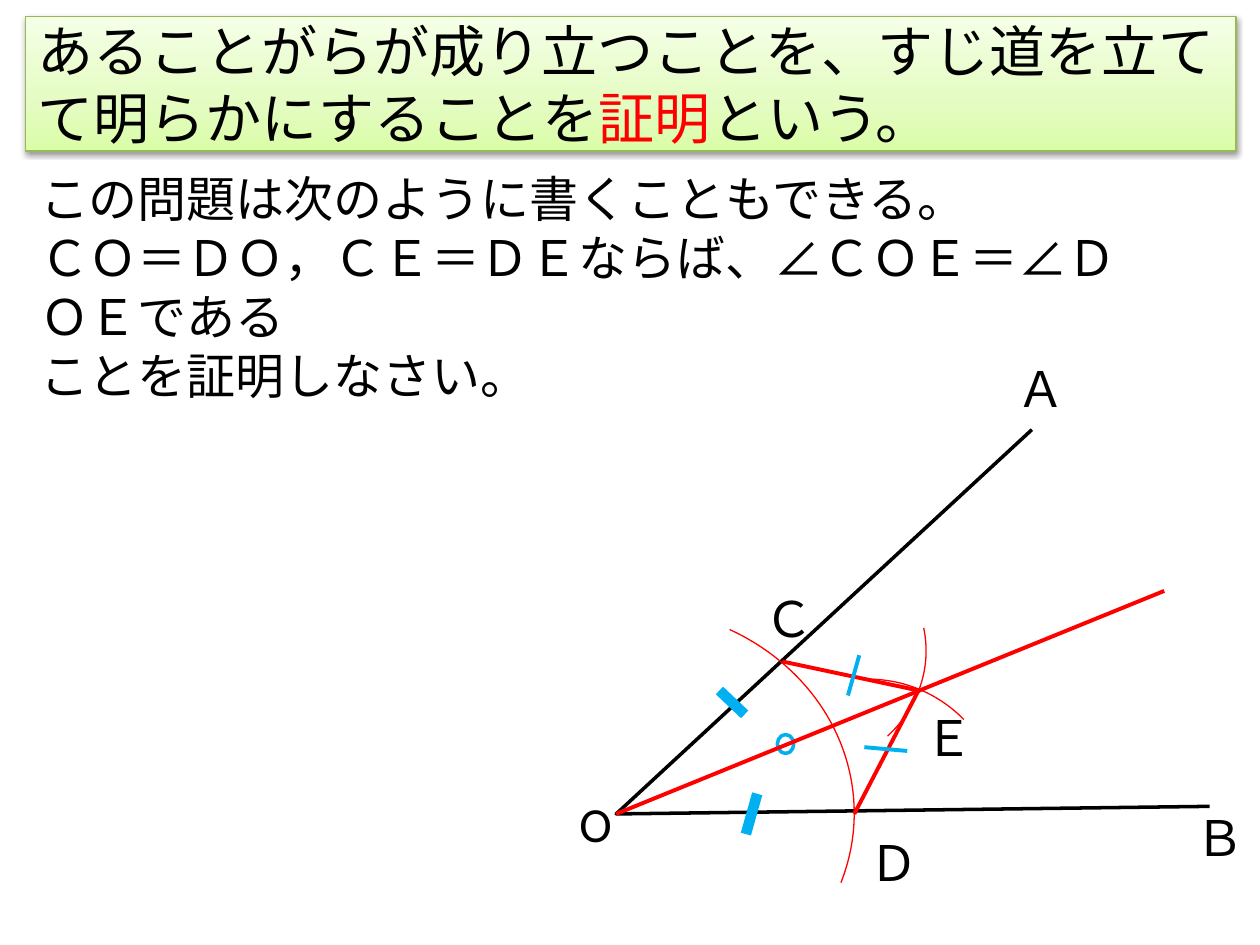
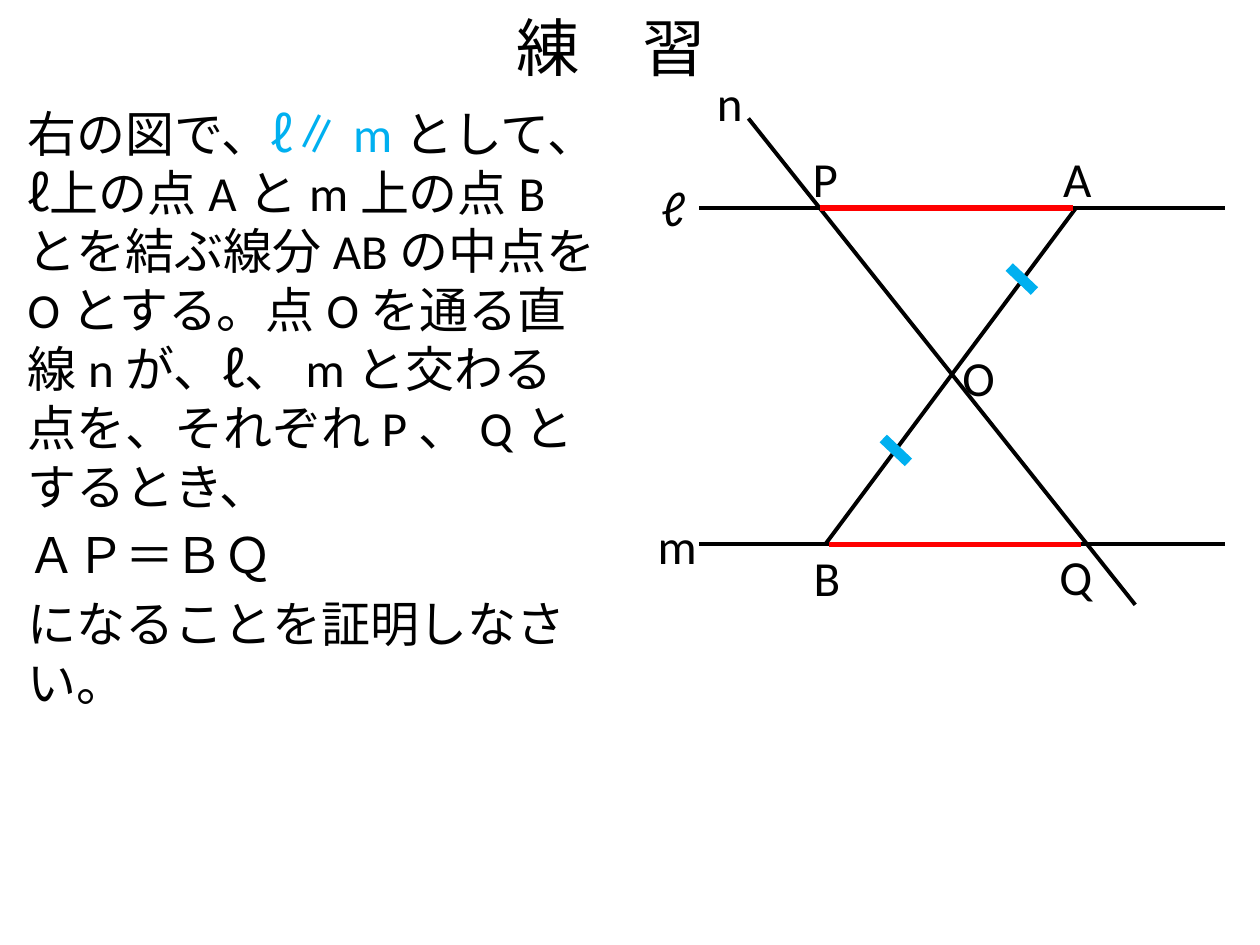
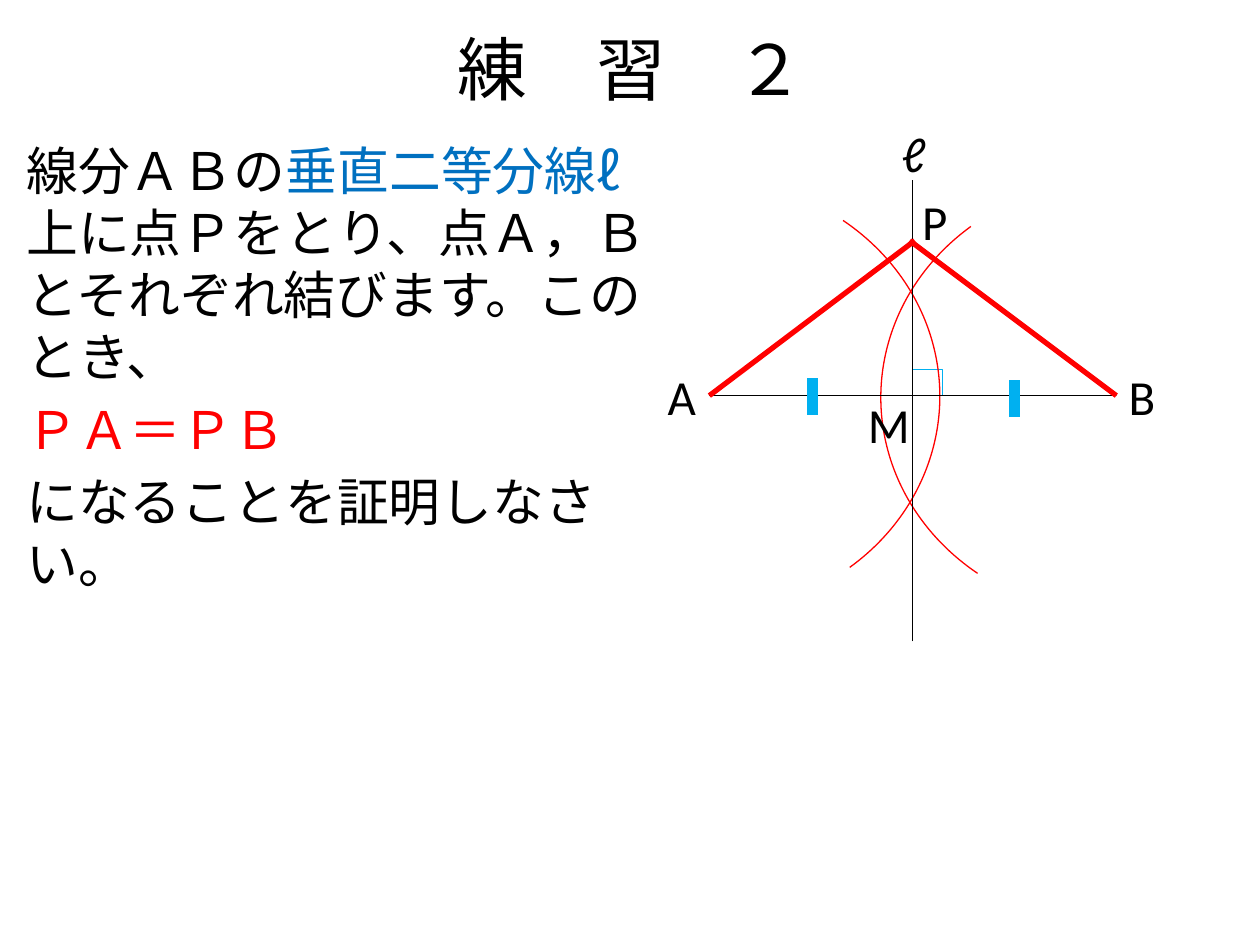
"""Build three geometry slides about proofs, each with text and a figure."""
from copy import deepcopy

from pptx import Presentation
from pptx.dml.color import RGBColor
from pptx.enum import lang, shapes, text
from pptx.oxml import parse_xml
from pptx.oxml.ns import nsdecls, qn
from pptx.util import Inches, Pt

BLACK = RGBColor(0, 0, 0)
RED = RGBColor(0xFF, 0, 0)
SKY = RGBColor(0, 0xB0, 0xF0)
BLUE = RGBColor(0, 0x70, 0xC0)
BANNER_LINE = RGBColor(0x98, 0xB9, 0x55)
BANNER_STOPS = [(0, RGBColor(0xDA, 0xFD, 0xA7)), (0.35, RGBColor(0xE4, 0xFC, 0xC2)),
                (1, RGBColor(0xF5, 0xFF, 0xE7))]
FONT = "Calibri"
LABEL_SIZE = 28
LABEL_HEIGHT = 0.57
LABEL_WIDTHS = {"ℓ": 0.4, "m": 0.52, "n": 0.41, "O": 0.46, "B": 0.42, "Q": 0.47,
                "A": 0.43, "P": 0.41, "M": 0.54}
CENTER = text.PP_ALIGN.CENTER
OVAL = shapes.MSO_SHAPE.FLOWCHART_CONNECTOR
RECTANGLE = shapes.MSO_SHAPE.RECTANGLE

SLIDES = [
    {
        "title": {"at": (0.2, 0.13, 9.61, 1.07), "size": 32, "banner": True, "paras": [
            [("あることがらが成り立つことを、すじ道を立てて明らかにすることを", BLACK),
             ("証明", RED), ("という。", BLACK)]]},
        "body": {"at": (0.22, 1.29, 8.94, 1.51), "size": 28, "gap": 0, "paras": [
            [("この問題は次のように書くこともできる。", BLACK)],
            [("ＣＯ＝ＤＯ，ＣＥ＝ＤＥならば、∠ＣＯＥ＝∠ＤＯＥである", BLACK)],
            [("ことを証明しなさい。", BLACK)]]},
        "grouped": True,
        "angle": [(8.19, 3.41), (4.89, 6.46), (9.6, 6.4)],
        "outlines": [(OVAL, (6.17, 5.83, 0.13, 0.15), 2)],
        "arcs": [((3.17, 4.82, 3.61, 3.27), 299.24, 17.95, 0),
                 ((5.17, 4.19, 2.18, 1.95), 350.33, 40.82, 0),
                 ((5.83, 5.39, 2.12, 2.12), 3.92, 52.26, 263.5)],
        "lines": [(RED, 2.25, [(4.89, 6.46, 9.24, 4.69), (6.21, 5.25, 7.29, 5.48),
                               (6.78, 6.46, 7.29, 5.48)]),
                  (SKY, 6, [(5.71, 5.48, 5.91, 5.67), (6.01, 6.3, 5.92, 6.62)]),
                  (SKY, 2.25, [(6.82, 5.2, 6.73, 5.52), (7.2, 5.96, 6.86, 5.93)])],
        "label_box": (0.38, 0.4),
        "labels": [("Ｄ", 6.8, 6.56), ("Ｃ", 5.97, 4.62), ("Ｂ", 9.39, 6.36),
                   ("O", 4.5, 6.25), ("Ａ", 7.97, 2.8), ("Ｅ", 7.24, 5.57)],
    },
    {
        "title": {"at": (0.35, 0.1, 9, 0.54), "size": 36, "paras": [[("練　習", BLACK)]]},
        "body": {"at": (0.12, 0.77, 4.72, 4.1), "size": 28, "gap": 0.2, "paras": [
            [("右の図で、", BLACK), ("ℓ∥m", SKY),
             ("として、ℓ上の点Aとm上の点Bとを結ぶ線分ABの中点をOとする。"
              "点Oを通る直線nが、ℓ、mと交わる点を、それぞれP、Qとするとき、", BLACK)],
            [("ＡＰ＝ＢＱ", BLACK)],
            [("になることを証明しなさい。", BLACK)]]},
        "lines": [(BLACK, 2.25, [(5.55, 1.65, 9.72, 1.65), (5.55, 4.32, 9.72, 4.32),
                                 (5.94, 0.94, 9.01, 4.8), (6.55, 4.32, 8.54, 1.65)]),
                  (SKY, 6, [(8.01, 2.12, 8.21, 2.31), (7.01, 3.48, 7.21, 3.67)]),
                  (RED, 3, [(8.52, 1.65, 6.51, 1.65), (8.58, 4.32, 6.58, 4.32)])],
        "labels": [("ℓ", 5.15, 1.36), ("m", 5.12, 4.04), ("n", 5.59, 0.53),
                   ("O", 7.54, 2.71), ("B", 6.36, 4.3), ("Q", 8.31, 4.29),
                   ("A", 8.34, 1.13), ("P", 6.35, 1.13)],
    },
    {
        "title": {"at": (0.51, 0.15, 9, 0.77), "size": 39.6,
                  "paras": [[("練　習　２", BLACK)]]},
        "body": {"at": (0.11, 1.05, 5.12, 2.95), "size": 29.6, "gap": 0.2, "paras": [
            [("線分ＡＢの", BLACK), ("垂直二等分線ℓ", BLUE),
             ("上に点Ｐをとり、点Ａ，Ｂとそれぞれ結びます。このとき、", BLACK)],
            [("ＰＡ＝ＰＢ", RED)],
            [("になることを証明しなさい。", BLACK)]]},
        "outlines": [(RECTANGLE, (7.24, 2.93, 0.24, 0.21), 0.75)],
        "arcs": [((3.73, 1.42, 3.73, 3.45), 308.17, 49.74, 0),
                 ((6.99, 1.43, 3.73, 3.45), 308.17, 49.74, 180)],
        "lines": [(BLACK, 0.75, [(5.63, 3.14, 8.86, 3.14), (7.24, 5.09, 7.24, 1.43),
                                 (5.63, 3.14, 7.24, 1.91), (8.86, 3.14, 7.24, 1.91)]),
                  (SKY, 6, [(6.45, 3, 6.45, 3.29), (8.05, 3.02, 8.05, 3.31)]),
                  (RED, 3, [(5.63, 3.14, 7.26, 1.91), (8.86, 3.14, 7.22, 1.91)])],
        "labels": [("M", 6.79, 3.08), ("ℓ", 7.06, 0.93), ("B", 8.86, 2.86),
                   ("A", 5.2, 2.86), ("P", 7.22, 1.47)],
    },
]


def inches(values):
    return [Inches(value) for value in values]


def write(box, paras, size, align=text.PP_ALIGN.LEFT, anchor=text.MSO_ANCHOR.TOP, gap=0):
    frame = box.text_frame
    frame.word_wrap = True
    frame.vertical_anchor = anchor
    for index, spans in enumerate(paras):
        para = frame.add_paragraph() if index else frame.paragraphs[0]
        para.alignment = align
        if index and gap:
            para.space_before = Pt(size * gap)
        for words, color in spans:
            span = para.add_run()
            span.text = words
            span.font.color.rgb = color
            style = {"name": FONT, "size": Pt(size),
                     "language_id": lang.MSO_LANGUAGE_ID.JAPANESE}
            for key, value in style.items():
                setattr(span.font, key, value)


def stroke(shape, color, width):
    shape.line.color.rgb = color
    shape.line.width = Pt(width)


def add_outline(figure, kind, at, color, width):
    shape = figure.add_shape(kind, *inches(at))
    shape.shadow.inherit = False
    shape.fill.background()
    stroke(shape, color, width)
    return shape


def add_banner(page, at):
    banner = page.shapes.add_shape(RECTANGLE, *inches(at))
    stroke(banner, BANNER_LINE, 0.75)
    banner.fill.gradient()
    banner.fill.gradient_angle = 90
    stop_list = banner.fill._xPr.find(qn("a:gradFill")).find(qn("a:gsLst"))
    stop_list.insert(1, deepcopy(stop_list[0]))
    for stop, (position, color) in zip(banner.fill.gradient_stops, BANNER_STOPS):
        stop.position = position
        stop.color.rgb = color
    banner._element.spPr.append(parse_xml(
        f'<a:effectLst {nsdecls("a")}><a:outerShdw blurRad="{Pt(3.1)}" dist="{Pt(1.6)}" '
        'dir="5400000" rotWithShape="0"><a:srgbClr val="000000"><a:alpha val="38000"/>'
        '</a:srgbClr></a:outerShdw></a:effectLst>'))
    return banner


def add_title(page, title):
    banner = title.get("banner")
    box = add_banner(page, title["at"]) if banner else page.shapes.add_textbox(*inches(title["at"]))
    write(box, title["paras"], title["size"], anchor=text.MSO_ANCHOR.MIDDLE,
          align=text.PP_ALIGN.LEFT if banner else CENTER)


def add_figure(figure, content):
    for kind, at, width in content.get("outlines", []):
        add_outline(figure, kind, at, SKY, width)
    if "angle" in content:
        start, *others = [inches(point) for point in content["angle"]]
        builder = figure.build_freeform(*start)
        builder.add_line_segments(others, close=False)
        angle = builder.convert_to_shape()
        angle.shadow.inherit = False
        angle.fill.background()
        stroke(angle, BLACK, 2)
    for at, first, last, rotation in content.get("arcs", []):
        arc = add_outline(figure, shapes.MSO_SHAPE.ARC, at, RED, 0.75)
        arc.rotation = rotation
        for index, degrees in enumerate((first, last)):
            arc.adjustments[index] = degrees * 0.6
    for color, width, ends in content["lines"]:
        for end in ends:
            line = figure.add_connector(shapes.MSO_CONNECTOR.STRAIGHT, *inches(end))
            stroke(line, color, width)
            line._element.spPr.append(parse_xml(f'<a:effectLst {nsdecls("a")}/>'))
    for letter, left, top in content["labels"]:
        size = content.get("label_box") or (LABEL_WIDTHS[letter], LABEL_HEIGHT)
        label = figure.add_textbox(*inches((left, top, *size)))
        write(label, [[(letter, BLACK)]], LABEL_SIZE)
        label.text_frame.auto_size = text.MSO_AUTO_SIZE.SHAPE_TO_FIT_TEXT


def main():
    deck = Presentation()
    deck.slide_width, deck.slide_height = inches((10, 7.5))
    for content in SLIDES:
        page = deck.slides.add_slide(deck.slide_layouts[6])
        add_title(page, content["title"])
        body = content["body"]
        box = page.shapes.add_textbox(*inches(body["at"]))
        write(box, body["paras"], body["size"], gap=body["gap"])
        grouped = content.get("grouped")
        add_figure(page.shapes.add_group_shape().shapes if grouped else page.shapes, content)
    deck.save("out.pptx")


if __name__ == "__main__":
    main()
